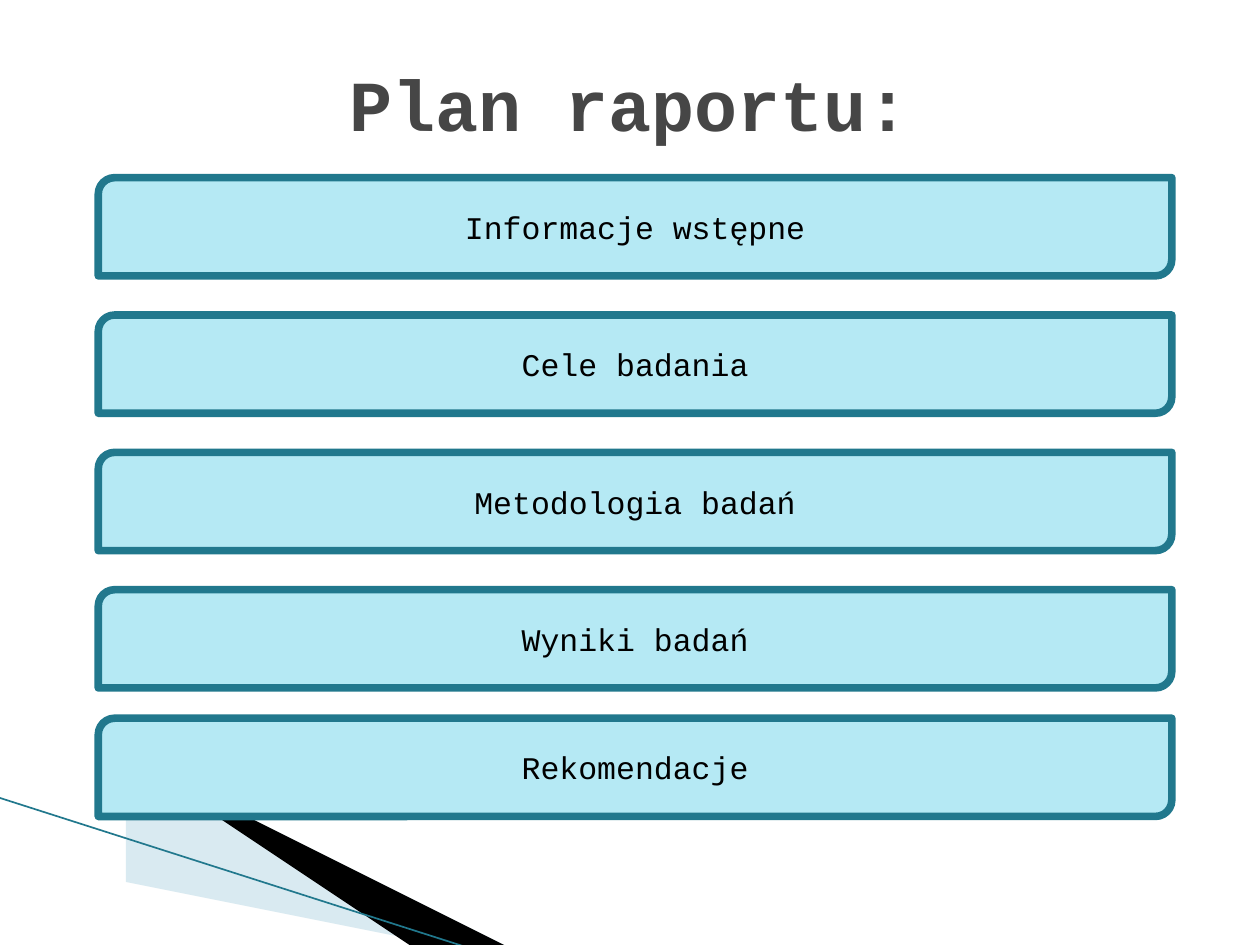
from lxml import etree
from pptx import Presentation
from pptx.dml.color import RGBColor
from pptx.enum.shapes import MSO_CONNECTOR, MSO_SHAPE
from pptx.enum.text import MSO_ANCHOR, PP_ALIGN
from pptx.oxml.ns import qn
from pptx.util import Inches, Pt

LINE = MSO_CONNECTOR.STRAIGHT
BAR = MSO_SHAPE.ROUND_2_DIAG_RECTANGLE
MIDDLE = MSO_ANCHOR.MIDDLE
CENTER = PP_ALIGN.CENTER

FONT = "Courier New"
TEAL = "21788D"
TOPICS = ["Informacje wstępne", "Cele badania", "Metodologia badań",
          "Wyniki badań", "Rekomendacje"]
TOP, STEP = 1.41, 1.09
LAST_TOP = 5.7  # the last bar sits closer to the one above


def color(code):
    return RGBColor.from_string(code)


def set_text(shape, text, size, code, bold=False):
    frame = shape.text_frame
    frame.word_wrap = True
    frame.vertical_anchor = MIDDLE
    frame.text = text
    para = frame.paragraphs[0]
    para.alignment = CENTER
    font = para.font
    font.name, font.size, font.bold = FONT, Pt(size), bold
    font.color.rgb = color(code)


def add_title(slide, text):
    title = slide.shapes.title
    title.left, title.top = Inches(0.5), Inches(0.3)
    title.width, title.height = Inches(9), Inches(1.03)
    set_text(title, text, 41, "464646", bold=True)


def add_wedge(slide, points, code, alpha=None):
    start, *rest = points
    pen = slide.shapes.build_freeform(*start, scale=Inches(1))
    pen.add_line_segments(rest, close=True)
    wedge = pen.convert_to_shape()
    wedge.shadow.inherit = False
    wedge.line.fill.background()
    wedge.fill.solid()
    wedge.fill.fore_color.rgb = color(code)
    if alpha is not None:
        tint = wedge.fill._xPr.find(".//" + qn("a:srgbClr"))
        etree.SubElement(tint, qn("a:alpha")).set("val", str(alpha * 1000))


def add_line(slide, start, end):
    line = slide.shapes.add_connector(
        LINE, *(Inches(v) for v in start + end))
    line.line.color.rgb = color(TEAL)
    line.line.width = Pt(0.95)
    etree.SubElement(line._element.spPr, qn("a:effectLst"))


def add_bar(slide, top, text):
    bar = slide.shapes.add_shape(
        BAR, Inches(0.78), Inches(top), Inches(8.52), Inches(0.78))
    bar.shadow.inherit = False
    bar.fill.solid()
    bar.fill.fore_color.rgb = color("B5E9F4")
    bar.line.color.rgb = color(TEAL)
    bar.line.width = Pt(4.33)
    set_text(bar, text, 18, "000000")


def main():
    deck = Presentation()
    deck.slide_width, deck.slide_height = Inches(10), Inches(7.5)
    slide = deck.slides.add_slide(deck.slide_layouts[5])

    # Corner decoration
    add_wedge(slide, [(0.55, 6.51), (5.95, 7.51), (4.56, 7.51), (0.55, 6.5)],
              "A0CBDC", alpha=40)
    add_wedge(slide, [(0.53, 6.49), (4.57, 7.51), (3.72, 7.52), (0.54, 6.5)],
              "000000")
    add_line(slide, (-0.01, 6.33), (3.71, 7.52))

    # Title and report plan
    add_title(slide, "Plan raportu:")
    for i, topic in enumerate(TOPICS[:-1]):
        add_bar(slide, TOP + i * STEP, topic)
    add_bar(slide, LAST_TOP, TOPICS[-1])

    deck.save("out.pptx")


if __name__ == "__main__":
    main()
